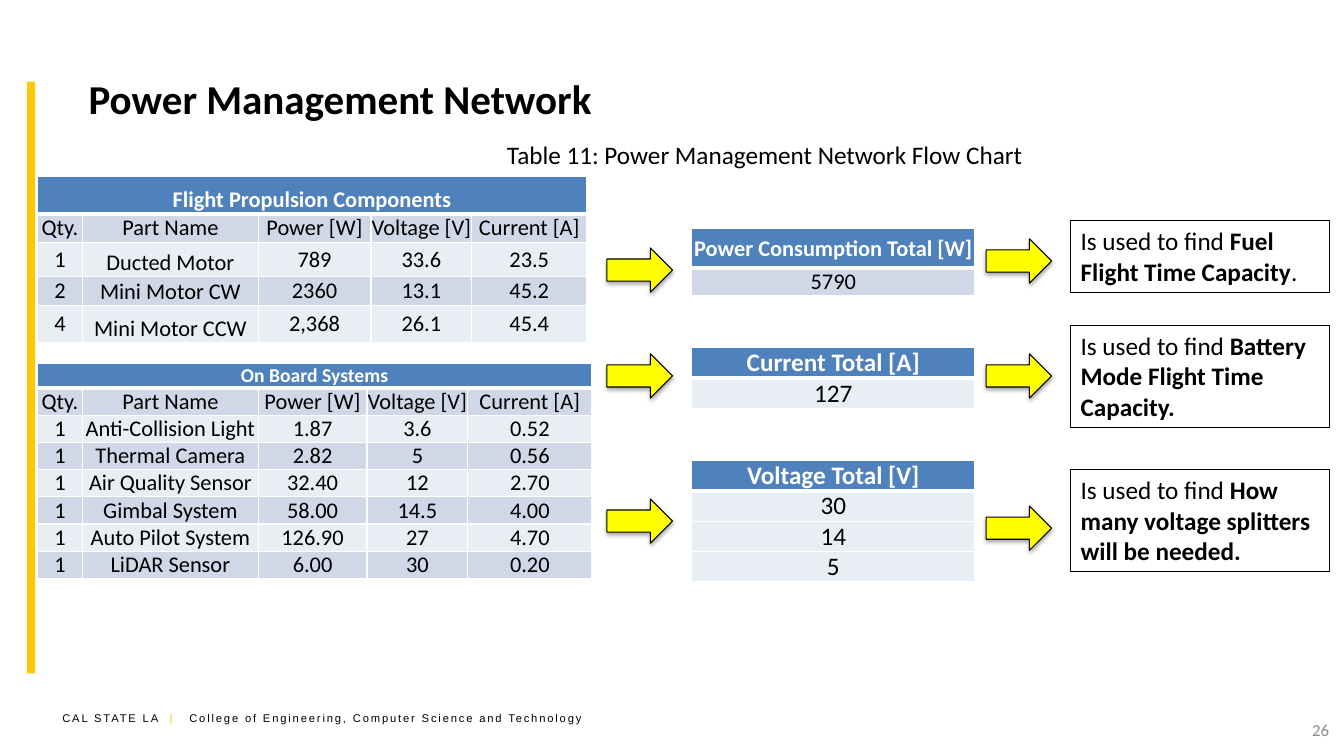
from dataclasses import dataclass

from lxml import etree
from pptx import Presentation
from pptx.dml.color import RGBColor
from pptx.enum.shapes import MSO_SHAPE as Shape
from pptx.enum.text import MSO_ANCHOR as Anchor, PP_ALIGN as Align
from pptx.oxml.ns import qn
from pptx.util import Inches, Pt


@dataclass(frozen=True)
class Theme:
    font: str = "Calibri"
    footer_font: str = "Arial"
    black: str = "000000"
    white: str = "FFFFFF"
    gold: str = "FCC90A"
    arrow: str = "FFFF00"
    header: str = "4F81BD"
    dark_band: str = "D0D8E8"
    light_band: str = "E9EDF4"
    gray: str = "8C8C8C"
    title: float = 29.3
    body: float = 18
    table: float = 16
    small_header: float = 14
    number: float = 12
    footer: float = 8


T = Theme()
BANDS = (T.dark_band, T.light_band)
COLUMNS = ("Qty.", "Part Name", "Power [W]", "Voltage [V]", "Current [A]")
PROPULSION = [
    COLUMNS,
    ("1", "Ducted Motor", "789", "33.6", "23.5"),
    ("2", "Mini Motor CW", "2360", "13.1", "45.2"),
    ("4", "Mini Motor CCW", "2,368", "26.1", "45.4"),
]
ON_BOARD = [
    COLUMNS,
    ("1", "Anti-Collision Light", "1.87", "3.6", "0.52"),
    ("1", "Thermal Camera", "2.82", "5", "0.56"),
    ("1", "Air Quality Sensor", "32.40", "12", "2.70"),
    ("1", "Gimbal System", "58.00", "14.5", "4.00"),
    ("1", "Auto Pilot System", "126.90", "27", "4.70"),
    ("1", "LiDAR Sensor", "6.00", "30", "0.20"),
]


def rgb(color):
    return RGBColor.from_string(color)


def style(font, size, color=T.black, bold=False, name=T.font):
    font.name, font.size, font.bold = name, Pt(size), bold
    font.color.rgb = rgb(color)


def add_text(s, box, text, size, color=T.black, bold=False, align=Align.LEFT,
             anchor=Anchor.TOP):
    tf = s.shapes.add_textbox(*map(Inches, box)).text_frame
    tf.word_wrap, tf.vertical_anchor = True, anchor
    p = tf.paragraphs[0]
    p.text, p.alignment = text, align
    style(p.font, size, color, bold)


def set_borders(cell, bottom):
    """Draw white cell borders, 1 pt wide except for the bottom one."""
    tc_pr = cell._tc.get_or_add_tcPr()
    for i, (side, width) in enumerate((("lnL", 1), ("lnR", 1), ("lnT", 1), ("lnB", bottom))):
        ln = etree.Element(qn(f"a:{side}"), w=str(Pt(width)))
        fill = etree.SubElement(ln, qn("a:solidFill"))
        etree.SubElement(fill, qn("a:srgbClr"), val=T.white)
        tc_pr.insert(i, ln)


def fill_cell(cell, text, fill, size, color=T.black, bold=False, anchor=Anchor.MIDDLE, bottom=1):
    cell.margin_left = cell.margin_right = cell.margin_top = cell.margin_bottom = 0
    cell.vertical_anchor = anchor
    cell.fill.solid()
    cell.fill.fore_color.rgb = rgb(fill)
    set_borders(cell, bottom)
    p = cell.text_frame.paragraphs[0]
    p.text, p.alignment = text, Align.CENTER
    style(p.font, size, color, bold)


def add_data_table(s, left, top, heading, rows, widths, heights, size=T.table, head_size=T.table,
                   bands=BANDS, head_anchor=Anchor.MIDDLE, name_anchor=Anchor.MIDDLE):
    """Place a table with one heading across all columns; name_anchor is for part names."""
    box = map(Inches, (left, top, sum(widths), sum(heights)))
    table = s.shapes.add_table(len(heights), len(widths), *box).table
    table.first_row = table.horz_banding = False
    for column, width in zip(table.columns, widths):
        column.width = Inches(width)
    for row, height in zip(table.rows, heights):
        row.height = Inches(height)
    if len(widths) > 1:
        table.cell(0, 0).merge(table.cell(0, len(widths) - 1))
    for c in range(len(widths)):
        fill_cell(table.cell(0, c), "" if c else heading, T.header, head_size, T.white, True,
                  head_anchor, bottom=3)
    for r, values in enumerate(rows, 1):
        for c, value in enumerate(values):
            anchor = name_anchor if c == 1 and r > 1 else Anchor.MIDDLE
            fill_cell(table.cell(r, c), value, bands[(r - 1) % len(bands)], size, anchor=anchor)


def add_arrow(s, left, top):
    sp = s.shapes.add_shape(Shape.RIGHT_ARROW, *map(Inches, (left, top, 0.65, 0.44)))
    sp.fill.solid()
    sp.fill.fore_color.rgb = rgb(T.arrow)
    sp.line.color.rgb = rgb(T.black)
    sp.line.width = Pt(0.75)
    sp.shadow.inherit = False
    effects = sp._element.spPr.find(qn("a:effectLst"))
    shadow = etree.SubElement(effects, qn("a:outerShdw"), blurRad=str(Pt(3.1)), dist=str(Pt(1.8)),
                              dir="5400000", rotWithShape="0")
    color = etree.SubElement(shadow, qn("a:srgbClr"), val=T.black)
    etree.SubElement(color, qn("a:alpha"), val="35000")


def add_use_box(s, top, height, use, ending=""):
    sp = s.shapes.add_shape(Shape.RECTANGLE, *map(Inches, (10.62, top, 2.57, height)))
    sp.shadow.inherit = False
    sp.fill.background()
    sp.line.color.rgb = rgb(T.black)
    sp.line.width = Pt(0.75)
    tf = sp.text_frame
    tf.word_wrap, tf.vertical_anchor = True, Anchor.TOP
    p = tf.paragraphs[0]
    p.alignment = Align.LEFT
    for text, bold in (("Is used to find ", False), (use, True), (ending, False)):
        if text:
            r = p.add_run()
            r.text = text
            style(r.font, T.body, bold=bold)


def add_frame(s):
    """Place the gold side bar, the footer and the slide number."""
    bar = s.shapes.add_shape(Shape.RECTANGLE, *map(Inches, (0.27, 0.81, 0.08, 5.87)))
    bar.shadow.inherit = False
    bar.fill.solid()
    bar.fill.fore_color.rgb = rgb(T.gold)
    bar.line.fill.background()
    tf = s.shapes.add_textbox(*map(Inches, (0.52, 7.01, 5.53, 0.24))).text_frame
    tf.word_wrap = True
    for text, color in (("CAL STATE LA ", T.black), (" |   ", T.gold),
                        ("College of Engineering, Computer Science and Technology", T.black)):
        r = tf.paragraphs[0].add_run()
        r.text = text
        style(r.font, T.footer, color, name=T.footer_font)
        r._r.get_or_add_rPr().set("spc", "130")
    add_text(s, (10.17, 7.04, 3.11, 0.4), "26", T.number, T.gray, align=Align.RIGHT,
             anchor=Anchor.MIDDLE)


def add_component_tables(s, left):
    add_data_table(s, left, 1.75, "Flight Propulsion Components", PROPULSION,
                   (0.45, 1.74, 1.12, 1, 1.14), (0.37, 0.29, 0.33, 0.29, 0.37),
                   head_anchor=Anchor.BOTTOM, name_anchor=Anchor.BOTTOM)
    add_data_table(s, left, 3.61, "On Board Systems", ON_BOARD, (0.45, 1.74, 1.08, 1, 1.23),
                   [0.24] + [0.27] * len(ON_BOARD), head_size=T.small_header,
                   head_anchor=Anchor.BOTTOM)


def add_totals(s, left):
    light = (T.light_band,)
    for top, heading, values, heights, size, bands in (
        (2.27, "Power Consumption Total [W]", ["5790"], (0.39, 0.27), T.table, BANDS),
        (3.45, "Current Total [A]", ["127"], [0.3] * 2, T.body, light),
        (4.57, "Voltage Total [V]", ["30", "14", "5"], [0.3] * 4, T.body, light),
    ):
        add_data_table(s, left, top, heading, [(v,) for v in values], (2.81,), heights,
                       size, size, bands)


def add_flow(s):
    for before, after in ((2.46, 2.37), (3.51, 3.51), (4.95, 5.02)):
        add_arrow(s, 6.02, before)
        add_arrow(s, 9.78, after)
    add_use_box(s, 2.19, 0.71, "Fuel Flight Time Capacity", ".")
    add_use_box(s, 3.23, 1.01, "Battery Mode Flight Time Capacity.")
    add_use_box(s, 4.66, 1.01, "How many voltage splitters will be needed.")


def main():
    prs = Presentation()
    prs.slide_width, prs.slide_height = Inches(13.33), Inches(7.5)
    s = prs.slides.add_slide(prs.slide_layouts[6])
    add_frame(s)
    add_text(s, (0.78, 0.35, 11.87, 1.25), "Power Management Network", T.title, bold=True,
             anchor=Anchor.MIDDLE)
    add_text(s, (4.93, 1.33, 5.51, 0.4), "Table 11: Power Management Network Flow Chart", T.body)
    add_component_tables(s, 0.37)
    add_totals(s, 6.86)
    add_flow(s)
    prs.save("out.pptx")


if __name__ == "__main__":
    main()
